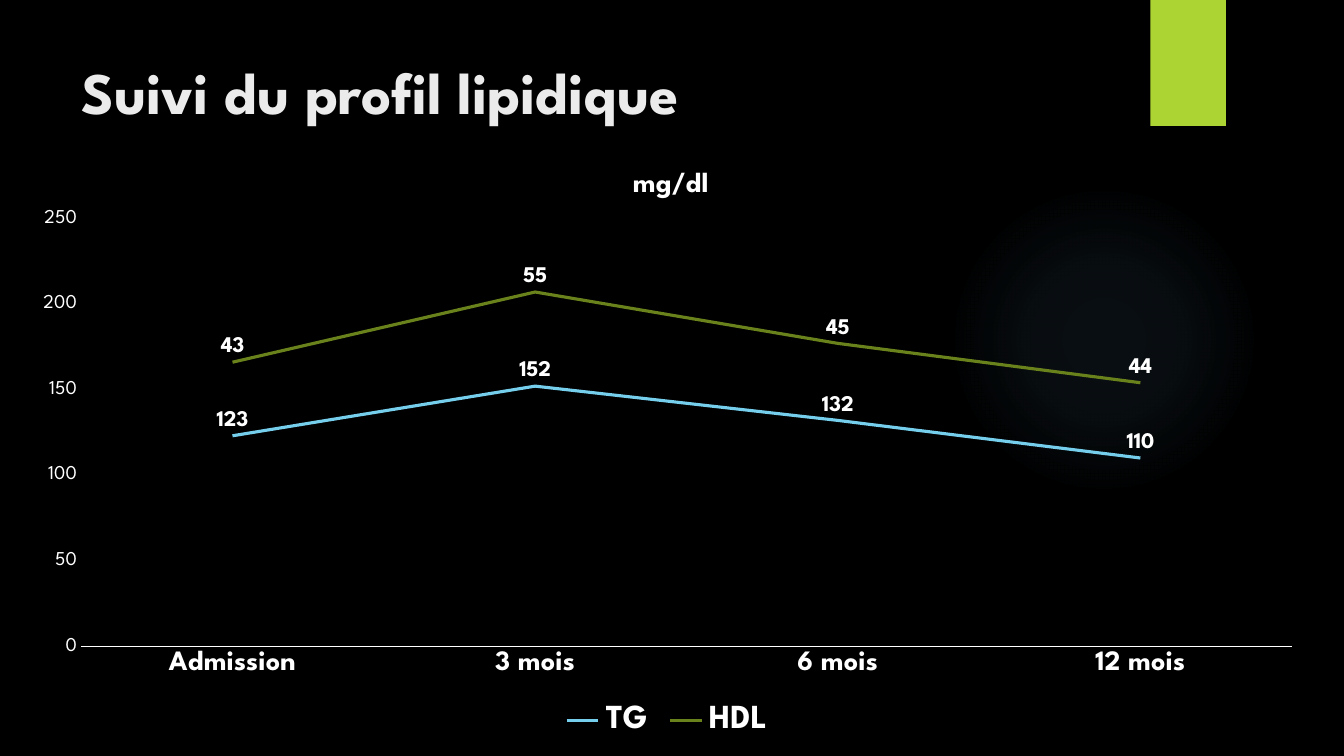
from lxml import etree
from pptx import Presentation
from pptx.chart.data import CategoryChartData
from pptx.dml.color import RGBColor
from pptx.enum.chart import XL_CHART_TYPE, XL_LABEL_POSITION, XL_LEGEND_POSITION, XL_MARKER_STYLE, XL_TICK_MARK
from pptx.enum.shapes import MSO_SHAPE
from pptx.enum.text import MSO_ANCHOR, PP_ALIGN
from pptx.oxml import parse_xml
from pptx.oxml.ns import nsdecls, qn
from pptx.util import Inches, Pt

COLORS = {
    "background": "000000", "glow": "7AC4F0", "tab": "ACD433", "title": "EBEBEB",
    "text": "FFFFFF", "TG": "75CEEC", "HDL": "69821B",
}
FONT = "League Spartan"


def style(font, size, bold=True, color="text"):
    font.name = FONT
    font.size = Pt(size)
    font.bold = bold
    font.color.rgb = RGBColor.from_string(COLORS[color])


def add_layout(parent, index, **places):
    layout = parse_xml(f"<c:layout {nsdecls('c')}><c:manualLayout/></c:layout>")
    for tag, value in places.items():
        etree.SubElement(layout[0], qn(f"c:{tag}")).set("val", str(value))
    for old in parent.findall(qn("c:layout")):
        parent.remove(old)
    parent.insert(index, layout)


prs = Presentation()
prs.slide_width, prs.slide_height = Inches(13.33), Inches(7.5)
slide = prs.slides.add_slide(prs.slide_layouts[5])
slide.background.fill.solid()
slide.background.fill.fore_color.rgb = RGBColor.from_string(COLORS["background"])

glow = slide.shapes.add_shape(MSO_SHAPE.OVAL, Inches(9.41), Inches(1.83), Inches(3.08), Inches(3.08))
glow.shadow.inherit = False
glow.line.fill.background()
stops = "".join(
    f'<a:gs pos="{position * 1000}"><a:srgbClr val="{COLORS["glow"]}">'
    f'<a:alpha val="{alpha * 1000}"/></a:srgbClr></a:gs>'
    for position, alpha in [(0, 7), (36, 6), (69, 0)]
)
glow.element.spPr.find(qn("a:prstGeom")).addnext(parse_xml(
    f'<a:gradFill {nsdecls("a")}><a:gsLst>{stops}</a:gsLst><a:path path="circle">'
    '<a:fillToRect l="50000" t="50000" r="50000" b="50000"/></a:path></a:gradFill>'
))

tab = slide.shapes.add_shape(MSO_SHAPE.RECTANGLE, Inches(11.41), Inches(0), Inches(0.75), Inches(1.25))
tab.fill.solid()
tab.fill.fore_color.rgb = RGBColor.from_string(COLORS["tab"])
tab.line.fill.background()
tab.shadow.inherit = False
tab.element.spPr.find(qn("a:effectLst")).append(parse_xml(
    f'<a:outerShdw {nsdecls("a")} blurRad="{Pt(3)}" dist="{Pt(2)}" dir="5400000" rotWithShape="0">'
    '<a:srgbClr val="000000"><a:alpha val="45000"/></a:srgbClr></a:outerShdw>'
))

title = slide.shapes.title
title.left, title.top, title.width, title.height = Inches(0.71), Inches(0.5), Inches(10.29), Inches(1.53)
title.text_frame.text = "Suivi du profil lipidique"
title.text_frame.vertical_anchor = MSO_ANCHOR.TOP
heading = title.text_frame.paragraphs[0]
heading.alignment = PP_ALIGN.LEFT
style(heading.font, 42, color="title")

lipids = CategoryChartData()
lipids.categories = ["Admission", "3 mois", "6 mois", "12 mois"]
lipids.add_series("TG", [123, 152, 132, 110])
lipids.add_series("HDL", [43, 55, 45, 44])
chart = slide.shapes.add_chart(
    XL_CHART_TYPE.LINE_STACKED, Inches(0.16), Inches(1.39), Inches(12.91), Inches(5.98), lipids
).chart
style(chart.font, 10, bold=False)

chart.has_title = True
unit = chart.chart_title.text_frame
unit.text = "mg/dl"
style(unit.paragraphs[0].font, 20)
chart.chart_title.include_in_layout = False
add_layout(chart.chart_title.element, 1, xMode="edge", yMode="edge", x=0.47, y=0.04)
add_layout(
    chart.element.chart.plotArea, 0,
    layoutTarget="inner", xMode="edge", yMode="edge", x=0.05, y=0.13, w=0.93, h=0.71,
)

chart.has_legend = True
chart.legend.position = XL_LEGEND_POSITION.BOTTOM
chart.legend.include_in_layout = False
style(chart.legend.font, 24)

months = chart.category_axis
months.major_tick_mark = XL_TICK_MARK.NONE
months.format.line.color.rgb = RGBColor.from_string(COLORS["text"])
months.format.line.width = Pt(0.75)
style(months.tick_labels.font, 20)

levels = chart.value_axis
levels.minimum_scale, levels.maximum_scale, levels.major_unit = 0, 250, 50
levels.has_major_gridlines = False
levels.major_tick_mark = XL_TICK_MARK.NONE
levels.format.line.fill.background()
style(levels.tick_labels.font, 14, bold=False)

chart.plots[0].vary_by_categories = False
for series in chart.plots[0].series:
    series.smooth = False
    series.marker.style = XL_MARKER_STYLE.NONE
    series.format.line.color.rgb = RGBColor.from_string(COLORS[series.name])
    series.format.line.width = Pt(2.25)
    series.data_labels.show_value = True
    series.data_labels.position = XL_LABEL_POSITION.ABOVE
    style(series.data_labels.font, 16)

prs.save("out.pptx")
